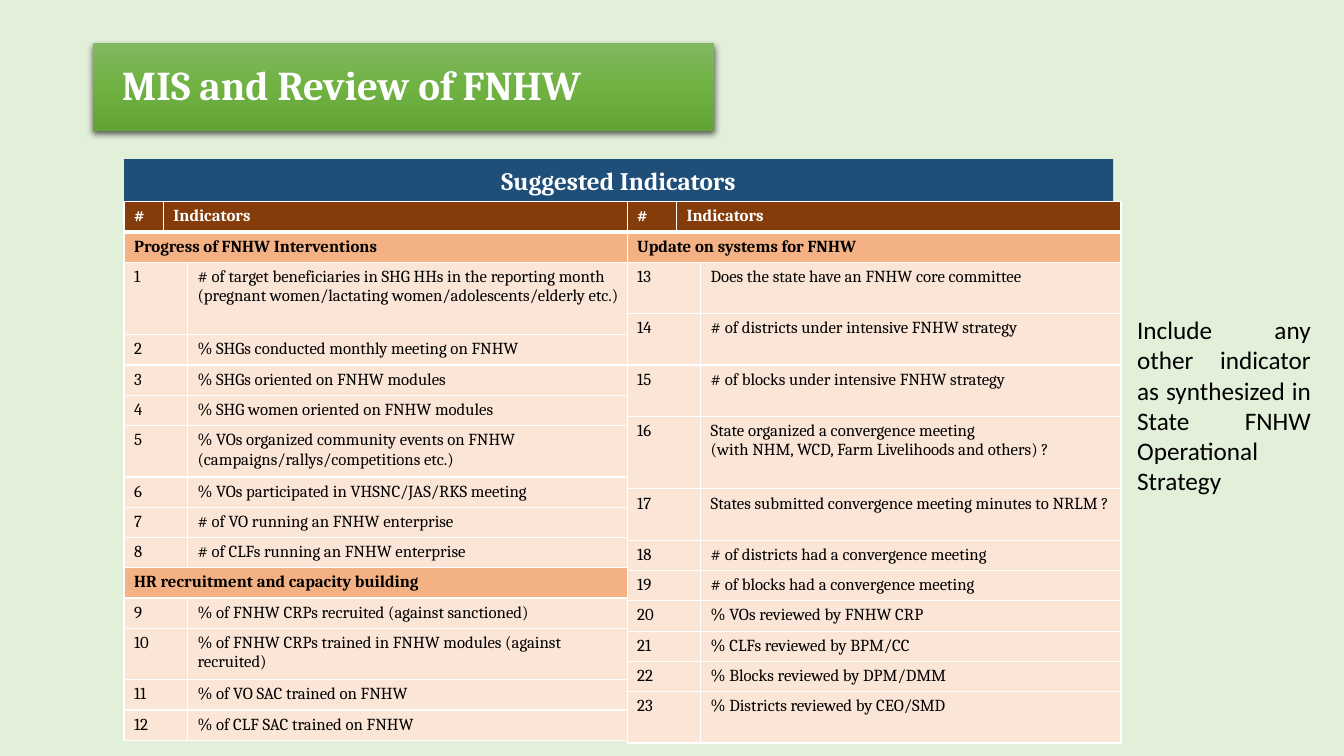
from copy import deepcopy

from lxml import etree
from pptx import Presentation
from pptx import util as u
from pptx.dml.color import RGBColor
from pptx.enum import shapes, text
from pptx.oxml.ns import qn

COLORS = {
    "background": "E2F0D9", "white": "FFFFFF", "black": "000000",
    "blue": "1F4E79", "brown": "843C0B", "orange": "F4B183", "peach": "FBE5D6",
    "green_top": "81B861", "green_middle": "6FB242", "green_bottom": "62A336",
}
ROW, DOUBLE_ROW, TALL_ROW = 0.3, 0.51, 0.72

# Each row: number, indicator, height; a section has None for its number
LEFT_ROWS = [
    (None, "Progress of FNHW Interventions", ROW),
    ("1", "# of target beneficiaries in SHG HHs in the reporting month "
          "(pregnant women/lactating women/adolescents/elderly etc.)", TALL_ROW),
    ("2", "% SHGs conducted monthly meeting on FNHW", ROW),
    ("3", "% SHGs oriented on FNHW modules", ROW),
    ("4", "% SHG women oriented on FNHW modules", ROW),
    ("5", "% VOs organized community events on FNHW "
          "(campaigns/rallys/competitions etc.)", DOUBLE_ROW),
    ("6", "% VOs participated in VHSNC/JAS/RKS meeting", ROW),
    ("7", "# of VO running an FNHW enterprise", ROW),
    ("8", "# of CLFs running an FNHW enterprise", ROW),
    (None, "HR recruitment and capacity building", ROW),
    ("9", "% of FNHW CRPs recruited (against sanctioned)", ROW),
    ("10", "% of FNHW CRPs trained in FNHW modules (against recruited)", DOUBLE_ROW),
    ("11", "% of VO SAC trained on FNHW", ROW),
    ("12", "% of CLF SAC trained on FNHW", ROW),
]
RIGHT_ROWS = [
    (None, "Update on systems for FNHW", ROW),
    ("13", "Does the state have an FNHW core committee", DOUBLE_ROW),
    ("14", "# of districts under intensive FNHW strategy", DOUBLE_ROW),
    ("15", "# of blocks under intensive FNHW strategy", DOUBLE_ROW),
    ("16", "State organized a convergence meeting\n"
           "(with NHM, WCD, Farm Livelihoods and others) ?", TALL_ROW),
    ("17", "States submitted convergence meeting minutes to NRLM ?", DOUBLE_ROW),
    ("18", "# of districts had a convergence meeting", ROW),
    ("19", "# of blocks had a convergence meeting", ROW),
    ("20", "% VOs reviewed by FNHW CRP", ROW),
    ("21", "% CLFs reviewed by BPM/CC", ROW),
    ("22", "% Blocks reviewed by DPM/DMM", ROW),
    ("23", "% Districts reviewed by CEO/SMD", DOUBLE_ROW),
]


def rgb(name):
    return RGBColor.from_string(COLORS[name])


def write(frame, words, size=12, font="Cambria", color="black", bold=False,
          align=text.PP_ALIGN.LEFT, spacing=None):
    for index, line in enumerate(words.split("\n")):
        para = frame.add_paragraph() if index else frame.paragraphs[0]
        para.alignment = align
        if spacing:
            para.line_spacing = spacing
        span = para.add_run()
        span.text = line
        span.font.size = u.Pt(size)
        span.font.name = font
        span.font.bold = bold
        span.font.color.rgb = rgb(color)


def add_box(page, left, top, width, height, fill=None):
    box = page.shapes.add_shape(shapes.MSO_SHAPE.RECTANGLE, u.Inches(left),
                                u.Inches(top), u.Inches(width), u.Inches(height))
    box.shadow.inherit = False
    box.line.fill.background()
    if fill:
        box.fill.solid()
        box.fill.fore_color.rgb = rgb(fill)
    box.text_frame.word_wrap = True
    return box


def add_title_banner(page):
    banner = add_box(page, 0.92, 0.43, 6.16, 0.87)
    banner.fill.gradient()
    banner.fill.gradient_angle = 270
    properties = banner._element.spPr
    stop_list = properties.find(qn("a:gradFill")).find(qn("a:gsLst"))
    stop_list.append(deepcopy(stop_list[-1]))
    names = ("green_top", "green_middle", "green_bottom")
    for index, (stop, name) in enumerate(zip(banner.fill.gradient_stops, names)):
        stop.position = index / 2
        stop.color.rgb = rgb(name)

    # Soft shadow below the banner
    shadow = etree.SubElement(
        properties.find(qn("a:effectLst")), qn("a:outerShdw"),
        blurRad=str(u.Pt(4.5)), dist=str(u.Pt(1.5)), dir="5400000", rotWithShape="0")
    color = etree.SubElement(shadow, qn("a:srgbClr"), val=COLORS["black"])
    etree.SubElement(color, qn("a:alpha"), val="63000")


def style_cell(cell, fill, bottom=1):
    properties = cell._tc.get_or_add_tcPr()
    for side, width in (("L", 1), ("R", 1), ("T", 1), ("B", bottom)):
        line = etree.SubElement(properties, qn(f"a:ln{side}"), w=str(u.Pt(width)))
        paint = etree.SubElement(line, qn("a:solidFill"))
        etree.SubElement(paint, qn("a:srgbClr"), val=COLORS["white"])
    cell.fill.solid()
    cell.fill.fore_color.rgb = rgb(fill)


def add_indicator_table(page, left, widths, rows):
    heights = [ROW] + [height for _, _, height in rows]
    table = page.shapes.add_table(
        len(heights), len(widths), u.Inches(left), u.Inches(2),
        u.Inches(sum(widths)), u.Inches(sum(heights))).table
    for column, width in zip(table.columns, widths):
        column.width = u.Inches(width)
    for row, height in zip(table.rows, heights):
        row.height = u.Inches(height)

    # Heading row
    for column in range(3):
        style_cell(table.cell(0, column), "brown", bottom=3)
    table.cell(0, 1).merge(table.cell(0, 2))
    for column, label in enumerate(("#", "Indicators")):
        write(table.cell(0, column).text_frame, label, color="white", bold=True)

    # Sections and numbered indicators
    for index, (number, indicator, _) in enumerate(rows, start=1):
        section = number is None
        for column in range(3):
            style_cell(table.cell(index, column), "orange" if section else "peach")
        first = table.cell(index, 0)
        first.merge(table.cell(index, 2 if section else 1))
        if section:
            write(first.text_frame, indicator, bold=True)
        else:
            write(first.text_frame, number)
            write(table.cell(index, 2).text_frame, indicator)


def add_title(page, words):
    box = page.shapes.add_textbox(u.Inches(1.05), u.Inches(0.58),
                                  u.Inches(12.28), u.Inches(0.57))
    frame = box.text_frame
    frame.word_wrap = True
    frame.margin_left = u.Inches(0.16)
    frame.vertical_anchor = text.MSO_ANCHOR.MIDDLE
    write(frame, words, size=29.2, color="white", bold=True, spacing=0.9)


def main():
    deck = Presentation()
    deck.slide_width, deck.slide_height = u.Inches(13.33), u.Inches(7.5)
    page = deck.slides.add_slide(deck.slide_layouts[6])
    page.background.fill.solid()
    page.background.fill.fore_color.rgb = rgb("background")

    # Title
    add_title_banner(page)
    add_title(page, "MIS and Review of FNHW")

    # Indicator tables under a shared heading
    heading = add_box(page, 1.23, 1.58, 9.81, 0.43, "blue")
    write(heading.text_frame, "Suggested Indicators", size=18, color="white",
          bold=True, align=text.PP_ALIGN.CENTER)
    add_indicator_table(page, 1.23, (0.39, 0.15, 4.45), LEFT_ROWS)
    add_indicator_table(page, 6.22, (0.49, 0.16, 4.17), RIGHT_ROWS)

    # Side note
    note = add_box(page, 11.18, 3.06, 1.92, 1.92, "background")
    write(note.text_frame, "Include any other indicator as synthesized in "
          "State FNHW Operational Strategy", size=18, font="Calibri",
          align=text.PP_ALIGN.JUSTIFY)

    deck.save("out.pptx")


if __name__ == "__main__":
    main()
